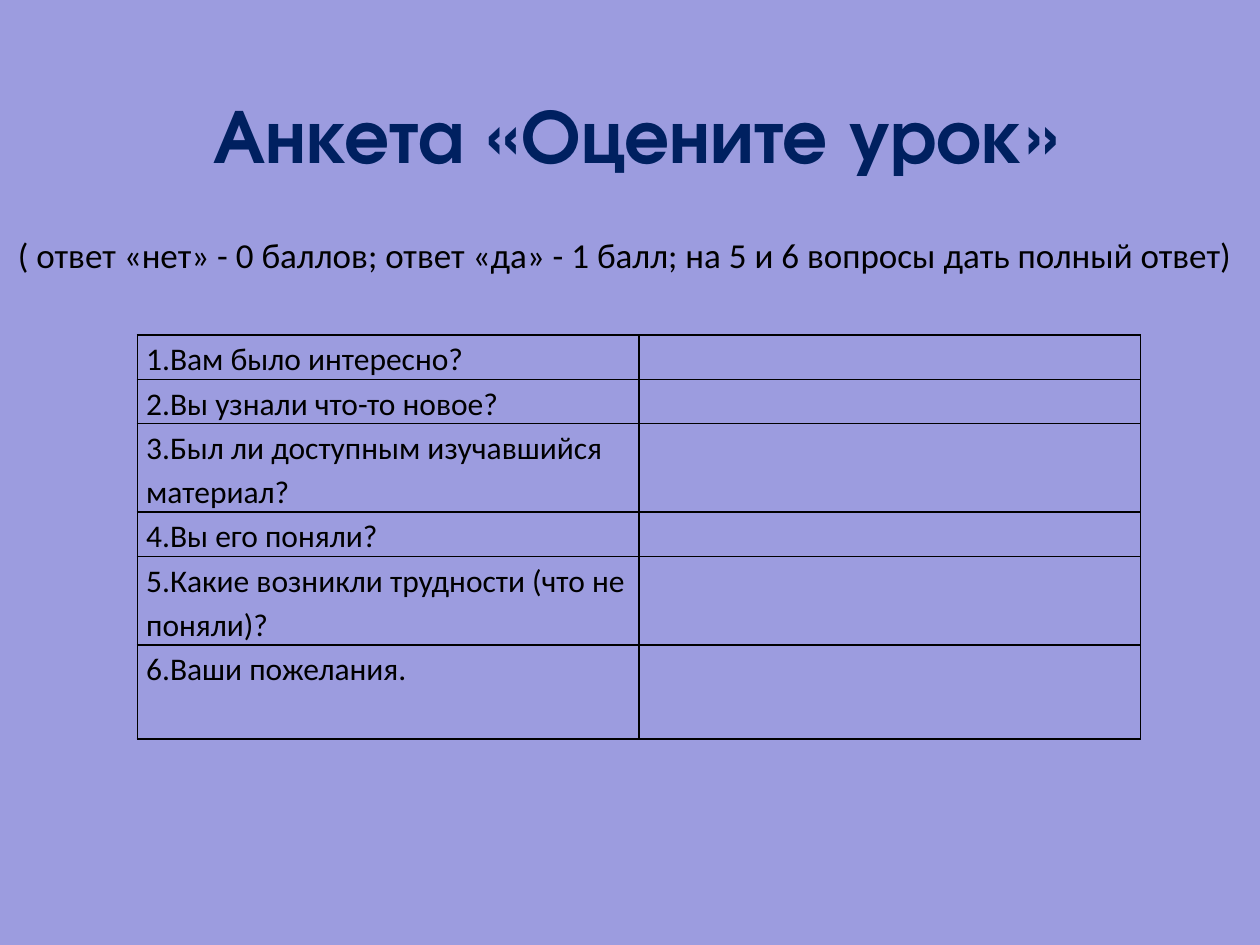
from dataclasses import dataclass

from lxml import etree
from pptx import Presentation
from pptx.dml.color import RGBColor
from pptx.enum.text import MSO_ANCHOR, PP_ALIGN
from pptx.oxml.ns import qn
from pptx.util import Inches, Pt

MIDDLE = MSO_ANCHOR.MIDDLE
CENTER = PP_ALIGN.CENTER
TITLE_ONLY = 5


@dataclass(frozen=True)
class Theme:
    background: RGBColor = RGBColor.from_string("9C9CDF")
    title_color: RGBColor = RGBColor.from_string("002060")
    text_color: RGBColor = RGBColor.from_string("000000")
    border_color: str = "000000"
    border_width: int = Pt(1)
    title_font: str = "TeX Gyre Adventor"
    text_font: str = "Calibri"
    title_size: int = Pt(44)
    note_size: int = Pt(20)
    table_size: int = Pt(18)


theme = Theme()
questions = [
    # question, row height in text lines
    ("1.Вам было интересно?", 1),
    ("2.Вы узнали что-то новое?", 1),
    ("3.Был ли доступным изучавшийся материал?", 2),
    ("4.Вы его поняли?", 1),
    ("5.Какие возникли трудности (что не поняли)?", 2),
    ("6.Ваши пожелания.", 2.14),
]
line_height = Inches(0.35)
column_width = Inches(3.98)


def style_text(paragraph, font_name, size, color, bold=False):
    paragraph.font.name = font_name
    paragraph.font.size = size
    paragraph.font.color.rgb = color
    paragraph.font.bold = bold


def add_borders(cell):
    """Draw a solid line on all four sides; call before setting the cell's fill."""
    properties = cell._tc.get_or_add_tcPr()
    for side in ("a:lnL", "a:lnR", "a:lnT", "a:lnB"):
        line = etree.SubElement(properties, qn(side), w=str(theme.border_width))
        fill = etree.SubElement(line, qn("a:solidFill"))
        etree.SubElement(fill, qn("a:srgbClr"), val=theme.border_color)


presentation = Presentation()
presentation.slide_width = Inches(10)
presentation.slide_height = Inches(7.5)
slide = presentation.slides.add_slide(presentation.slide_layouts[TITLE_ONLY])
slide.background.fill.solid()
slide.background.fill.fore_color.rgb = theme.background

# Title
title = slide.shapes.title
title.left, title.top = Inches(0.8), Inches(0.39)
title.width, title.height = Inches(8.5), Inches(1.32)
title.text_frame.text = "Анкета «Оцените урок»"
title.text_frame.vertical_anchor = MIDDLE
paragraph = title.text_frame.paragraphs[0]
paragraph.alignment = CENTER
style_text(paragraph, theme.title_font, theme.title_size, theme.title_color, bold=True)

# Questionnaire: questions on the left, room for answers on the right
table_height = int(sum(lines for _, lines in questions) * line_height)
table = slide.shapes.add_table(
    len(questions), 2, Inches(1.09), Inches(2.66), 2 * column_width, table_height
).table
table.first_row = False
table.horz_banding = False
for column in table.columns:
    column.width = column_width
for row, (question, lines) in zip(table.rows, questions):
    row.height = int(lines * line_height)
    for cell, text in zip(row.cells, (question, "")):
        cell.text = text
        cell.margin_left = cell.margin_right = Inches(0.07)
        cell.margin_top = cell.margin_bottom = 0
        add_borders(cell)
        cell.fill.background()
        paragraph = cell.text_frame.paragraphs[0]
        paragraph.line_spacing = 1.15
        style_text(paragraph, theme.text_font, theme.table_size, theme.text_color)

# Scoring note
note = slide.shapes.add_textbox(0, Inches(1.8), Inches(9.92), Inches(0.44))
note.text_frame.text = (
    "( ответ «нет» - 0 баллов; ответ «да» - 1 балл; на 5 и 6 вопросы дать полный ответ)"
)
note.text_frame.word_wrap = False
note.text_frame.vertical_anchor = MIDDLE
paragraph = note.text_frame.paragraphs[0]
paragraph.alignment = CENTER
style_text(paragraph, theme.text_font, theme.note_size, theme.text_color)

presentation.save("out.pptx")
